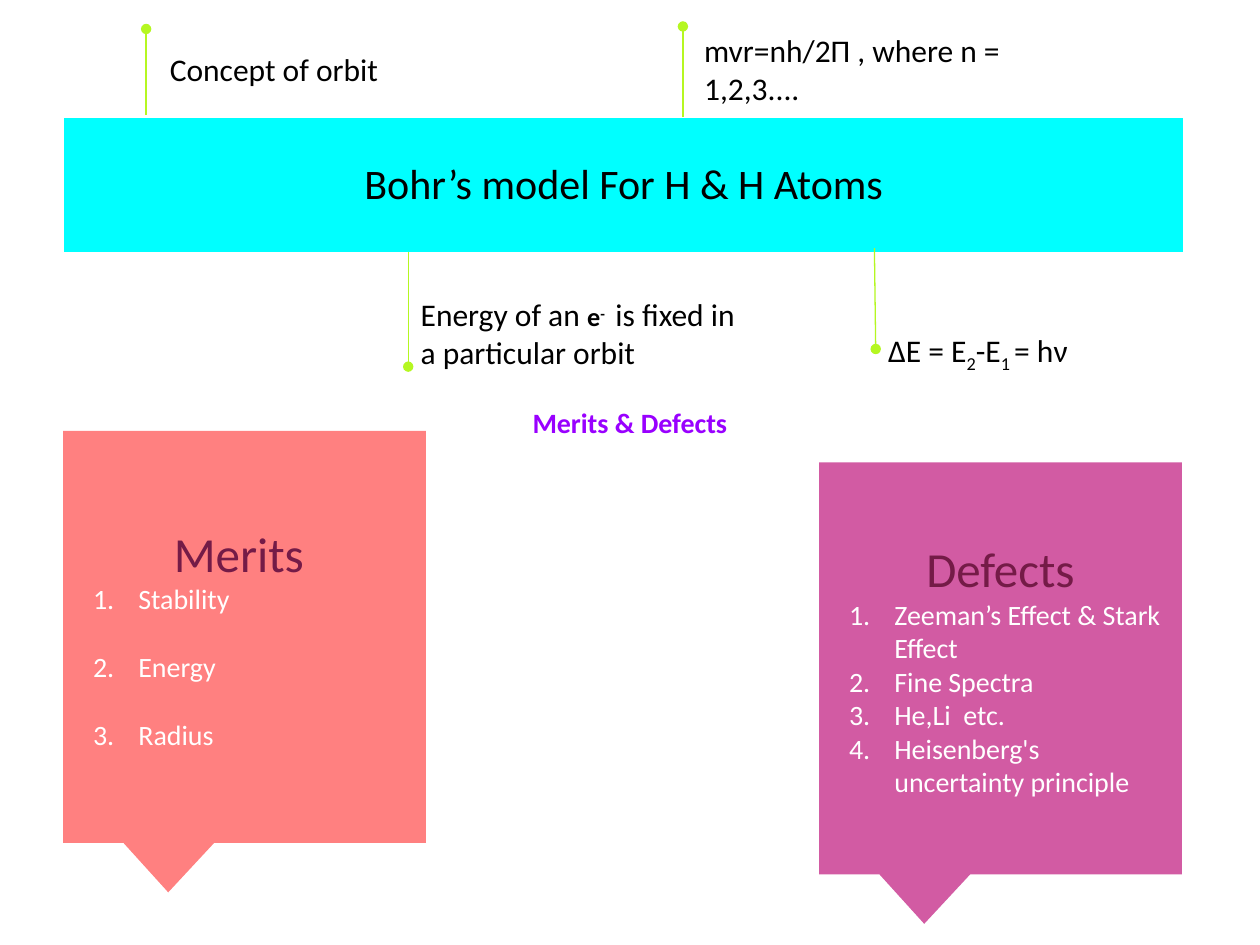
from lxml import etree
from pptx import Presentation
from pptx.dml.color import RGBColor
from pptx.enum import shapes, text
from pptx.oxml import ns
from pptx.util import Inches, Pt

FONT = "Calibri"
BLACK, WHITE, LIME, PLUM = "000000", "FFFFFF", "B5F721", "741B47"
NO_STYLE = "{2D5ABB26-0587-4C30-8999-92F81FD0307C}"


def color(hex_value):
    return RGBColor.from_string(hex_value)


def place(box):
    return [Inches(length) for length in box]


def add_span(para, words, size, hex_value=BLACK, bold=False, baseline=0):
    span = para.add_run()
    span.text = words
    span.font.name = FONT
    span.font.size = Pt(size)
    span.font.bold = bold
    span.font.color.rgb = color(hex_value)
    if baseline:
        span.font._element.set("baseline", str(baseline * 1000))


def set_frame(frame, anchor=text.MSO_ANCHOR.MIDDLE):
    frame.word_wrap = True
    frame.vertical_anchor = anchor
    frame.margin_left = frame.margin_right = Inches(0.1)
    frame.margin_top = frame.margin_bottom = Inches(0.1)


def number_para(para):
    props = para._p.get_or_add_pPr()
    props.set("marL", str(Inches(0.5)))
    props.set("indent", str(Inches(-0.36)))
    bullet_color = etree.SubElement(props, ns.qn("a:buClr"))
    etree.SubElement(bullet_color, ns.qn("a:srgbClr"), val=WHITE)
    etree.SubElement(props, ns.qn("a:buFont"), typeface=FONT)
    etree.SubElement(props, ns.qn("a:buAutoNum"), type="arabicPeriod")


def add_banner(page, box, title):
    """One merged table row across the page."""
    left, top, width, height = place(box)
    table = page.shapes.add_table(1, 4, left, top, width, height).table
    table.first_row = table.horz_banding = False
    table._tbl.tblPr.find(ns.qn("a:tableStyleId")).text = NO_STYLE
    for column, column_width in zip(table.columns, (2.51, 2.51, 2.51, 1.35)):
        column.width = Inches(column_width)
    cell = table.cell(0, 0)
    cell.merge(table.cell(0, 3))
    cell.fill.solid()
    cell.fill.fore_color.rgb = color("00FFFF")
    cell.vertical_anchor = text.MSO_ANCHOR.MIDDLE
    cell.margin_top = cell.margin_bottom = Inches(0.13)
    para = cell.text_frame.paragraphs[0]
    para.alignment = text.PP_ALIGN.CENTER
    add_span(para, title, 24)


def add_pin(page, start, end):
    """A thin line with a dot at its far end."""
    pin = page.shapes.add_connector(
        shapes.MSO_CONNECTOR.STRAIGHT, *place(start), *place(end))
    pin.line.color.rgb = color(LIME)
    pin.line.width = Pt(0.75)
    etree.SubElement(pin.line._get_or_add_ln(), ns.qn("a:tailEnd"), type="oval")
    etree.SubElement(pin._element.spPr, ns.qn("a:effectLst"))


def add_label(page, box, spans, anchor=text.MSO_ANCHOR.MIDDLE):
    label = page.shapes.add_textbox(*place(box))
    set_frame(label.text_frame, anchor)
    para = label.text_frame.paragraphs[0]
    for span in spans:
        add_span(para, *span)
    return para


def add_callout(page, box, fill, heading, items, gap=0):
    """A callout holding a heading and a numbered list."""
    callout = page.shapes.add_shape(
        shapes.MSO_SHAPE.RECTANGULAR_CALLOUT, *place(box))
    callout.adjustments[0], callout.adjustments[1] = -0.21, 0.62
    callout.shadow.inherit = False
    callout.fill.solid()
    callout.fill.fore_color.rgb = color(fill)
    callout.line.fill.background()
    frame = callout.text_frame
    set_frame(frame)
    para = frame.paragraphs[0]
    para.alignment = text.PP_ALIGN.CENTER
    add_span(para, heading, 28, PLUM)
    for item in items:
        para = frame.add_paragraph()
        para.alignment = text.PP_ALIGN.LEFT
        if gap and item != items[-1]:
            para.space_after = Pt(gap)
        number_para(para)
        add_span(para, item, 16, WHITE)


def add_model(page):
    """The banner with its four pinned postulates."""
    add_banner(page, (0.51, 0.94, 8.88, 1.06), "Bohr’s model For H & H Atoms")
    for start, end in (
        ((1.16, 0.91), (1.16, 0.23)),
        ((3.24, 2), (3.24, 2.91)),
        ((5.42, 0.93), (5.42, 0.21)),
        ((6.94, 1.97), (6.95, 2.77)),
    ):
        add_pin(page, start, end)
    add_label(page, (1.25, 0.14, 2.7, 0.81), [("Concept of orbit", 18)])
    add_label(page, (5.49, 0.14, 2.57, 0.81),
              [("mvr=nh/2Π , where n = 1,2,3....", 18)])
    add_label(page, (3.24, 2.38, 2.85, 0.53), [
        ("Energy of an ", 18),
        ("e", 15, BLACK, True),
        ("- ", 15, BLACK, True, 30),
        (" is fixed in a particular orbit", 18),
    ])
    energy_gap = add_label(page, (6.95, 2.43, 2.57, 0.68), [
        ("ΔE = E", 18),
        ("2", 18, BLACK, False, -25),
        ("-E", 18),
        ("1 ", 18, BLACK, False, -25),
        ("= hν", 18),
    ])
    energy_gap.alignment = text.PP_ALIGN.JUSTIFY
    energy_gap.line_spacing = 1.15
    energy_gap.space_after = Pt(16)


def add_review(page):
    """Merits and defects with their shared heading."""
    add_callout(page, (0.5, 3.42, 2.88, 3.27), "FF8080", "Merits ",
                ["Stability", "Energy", "Radius"], gap=19.5)
    add_callout(page, (6.5, 3.67, 2.88, 3.27), "D25BA3", "Defects",
                ["Zeeman’s Effect & Stark Effect", "Fine Spectra",
                 "He,Li  etc.", "Heisenberg's uncertainty principle"])
    heading = add_label(page, (0, 3.12, 10, 0.68),
                        [("Merits & Defects", 16, "9900FF", True)],
                        text.MSO_ANCHOR.TOP)
    heading.alignment = text.PP_ALIGN.CENTER


def main():
    deck = Presentation()
    deck.slide_width, deck.slide_height = Inches(10), Inches(7.5)
    page = deck.slides.add_slide(deck.slide_layouts[6])
    add_model(page)
    add_review(page)
    deck.save("out.pptx")


if __name__ == "__main__":
    main()
